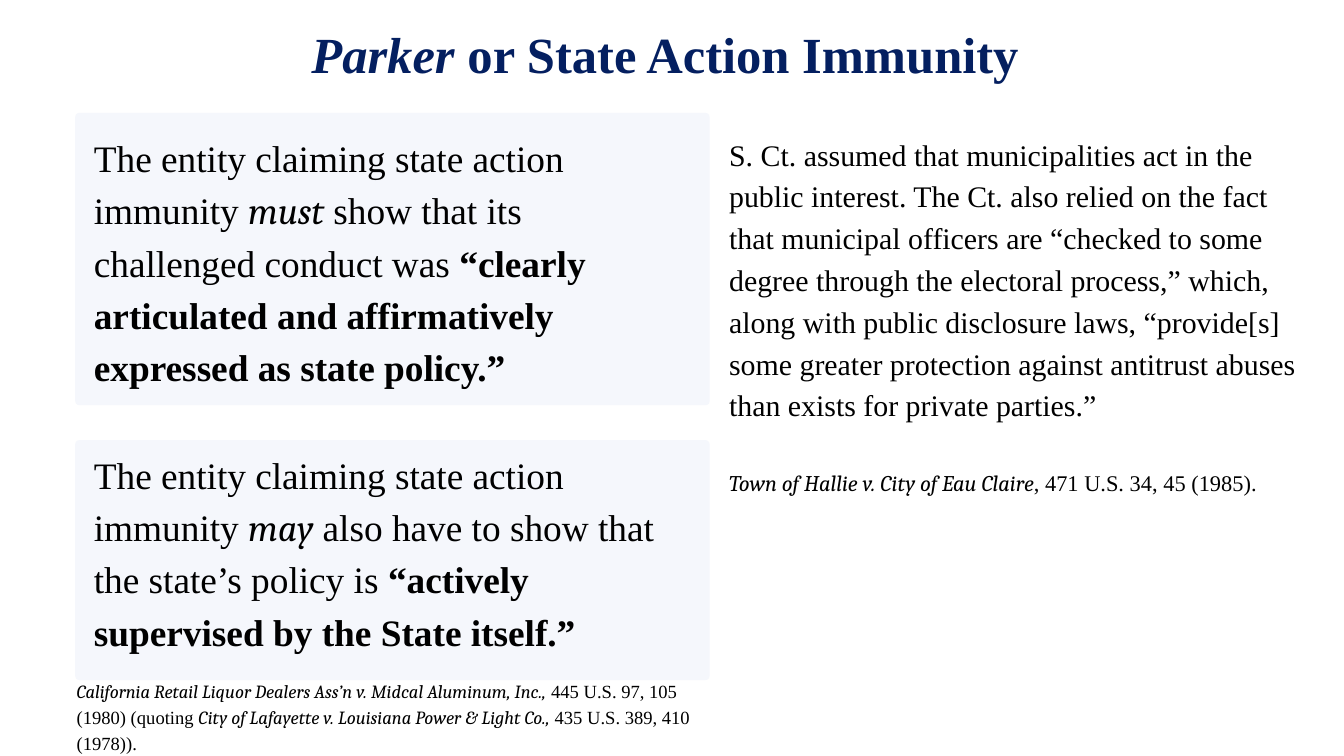
from pptx import Presentation
from pptx.dml.color import RGBColor
from pptx.enum import shapes, text
from pptx.util import Inches, Pt

THEME = {
    "serif": "Times New Roman", "emphasis": "Cambria",
    "ink": RGBColor(0, 0, 0), "navy": RGBColor(0x04, 0x1F, 0x60),
    "card": RGBColor(0xF5, 0xF7, 0xFC),
    # type size, line height in points
    "title": (54.2, 75.8), "rule": (40, 56), "quote": (32, 44.8),
    "cite": (24, 33.6), "footnote": (19.9, 27.8),
}

PLAIN = {}
ITALIC = {"italic": True, "name": THEME["emphasis"]}
BOLD = {"bold": True}

# Each paragraph is a list of (words, format)
TITLE = [("Parker ", {"bold": True, "italic": True}),
         ("or State Action Immunity", BOLD)]

# top, height, bottom inset, words
RULES = [
    (1.68, 4.35, 0.02, [
        ("The entity claiming state action immunity ", PLAIN),
        ("must", ITALIC),
        (" show that its challenged conduct was ", PLAIN),
        ("“clearly articulated and affirmatively expressed as state policy.”", BOLD)]),
    (6.55, 3.57, 0.33, [
        ("The entity claiming state action immunity ", PLAIN),
        ("may", ITALIC),
        (" also have to show that the state’s policy is ", PLAIN),
        ("“actively supervised by the State itself.”", BOLD)]),
]

SOURCES = [
    ("California Retail Liquor Dealers Ass’n v. Midcal Aluminum, Inc.,", ITALIC),
    (" 445 U.S. 97, 105 (1980) (quoting ", PLAIN),
    ("City of Lafayette v. Louisiana Power & Light Co.,", ITALIC),
    (" 435 U.S. 389, 410 (1978)).", PLAIN),
]

HALLIE = [(
    "S. Ct. assumed that municipalities act in the public interest. The Ct. also "
    "relied on the fact that municipal officers are “checked to some degree through "
    "the electoral process,” which, along with public disclosure laws, “provide[s] "
    "some greater protection against antitrust abuses than exists for private "
    "parties.”", PLAIN)]
HALLIE_CITE = [("Town of Hallie v. City of Eau Claire", ITALIC),
               (", 471 U.S. 34, 45 (1985).", PLAIN)]

CARD_LEFT, CARD_WIDTH, CORNER, CARD_PAD = 1.12, 9.44, 0.06, 0.26


def write(paragraph, words, style, color=THEME["ink"], align=text.PP_ALIGN.LEFT):
    size, line_height = THEME[style]
    paragraph.alignment = align
    paragraph.line_spacing = Pt(line_height)
    for words_part, changes in words:
        run = paragraph.add_run()
        run.text = words_part
        run.font.color.rgb = color
        values = {"name": THEME["serif"], "size": Pt(size),
                  "bold": False, "italic": False, **changes}
        for key, value in values.items():
            setattr(run.font, key, value)


def prepare(frame, anchor=text.MSO_ANCHOR.TOP, side=0, bottom=0):
    """Set wrapping, anchor and insets; return the first paragraph."""
    values = {"word_wrap": True, "auto_size": text.MSO_AUTO_SIZE.NONE,
              "vertical_anchor": anchor, "margin_top": 0,
              "margin_left": Inches(side), "margin_right": Inches(side),
              "margin_bottom": Inches(bottom)}
    for key, value in values.items():
        setattr(frame, key, value)
    return frame.paragraphs[0]


def add_rule_card(slide, top, height, bottom, words):
    card = slide.shapes.add_shape(
        shapes.MSO_SHAPE.ROUNDED_RECTANGLE,
        *map(Inches, (CARD_LEFT, top, CARD_WIDTH, height)))
    card.adjustments[0] = CORNER / height
    card.shadow.inherit = False
    card.fill.solid()
    card.fill.fore_color.rgb = THEME["card"]
    card.line.fill.background()
    first = prepare(card.text_frame, text.MSO_ANCHOR.MIDDLE, CARD_PAD, bottom)
    write(first, words, "rule")


def add_text(slide, box, paragraphs):
    """Add a text box; each paragraph is (words, style, points before)."""
    frame = slide.shapes.add_textbox(*map(Inches, box)).text_frame
    paragraph = prepare(frame)
    for index, (words, style, before) in enumerate(paragraphs):
        if index:
            paragraph = frame.add_paragraph()
        paragraph.space_before = Pt(before)
        write(paragraph, words, style)


def main():
    deck = Presentation()
    deck.slide_width, deck.slide_height = Inches(20), Inches(11.25)
    slide = deck.slides.add_slide(deck.slide_layouts[5])

    title = slide.shapes.title
    title.left, title.top, title.width, title.height = map(
        Inches, (0.58, 0.19, 18.64, 1.13))
    write(prepare(title.text_frame), TITLE, "title", THEME["navy"],
          text.PP_ALIGN.CENTER)

    for rule in RULES:
        add_rule_card(slide, *rule)
    add_text(slide, (1.14, 10.07, 9.44, 1.56), [(SOURCES, "footnote", 0)])
    quote_gap = THEME["quote"][1]
    add_text(slide, (10.85, 1.94, 8.45, 7.27),
             [(HALLIE, "quote", 0), (HALLIE_CITE, "cite", quote_gap)])

    deck.save("out.pptx")


if __name__ == "__main__":
    main()
